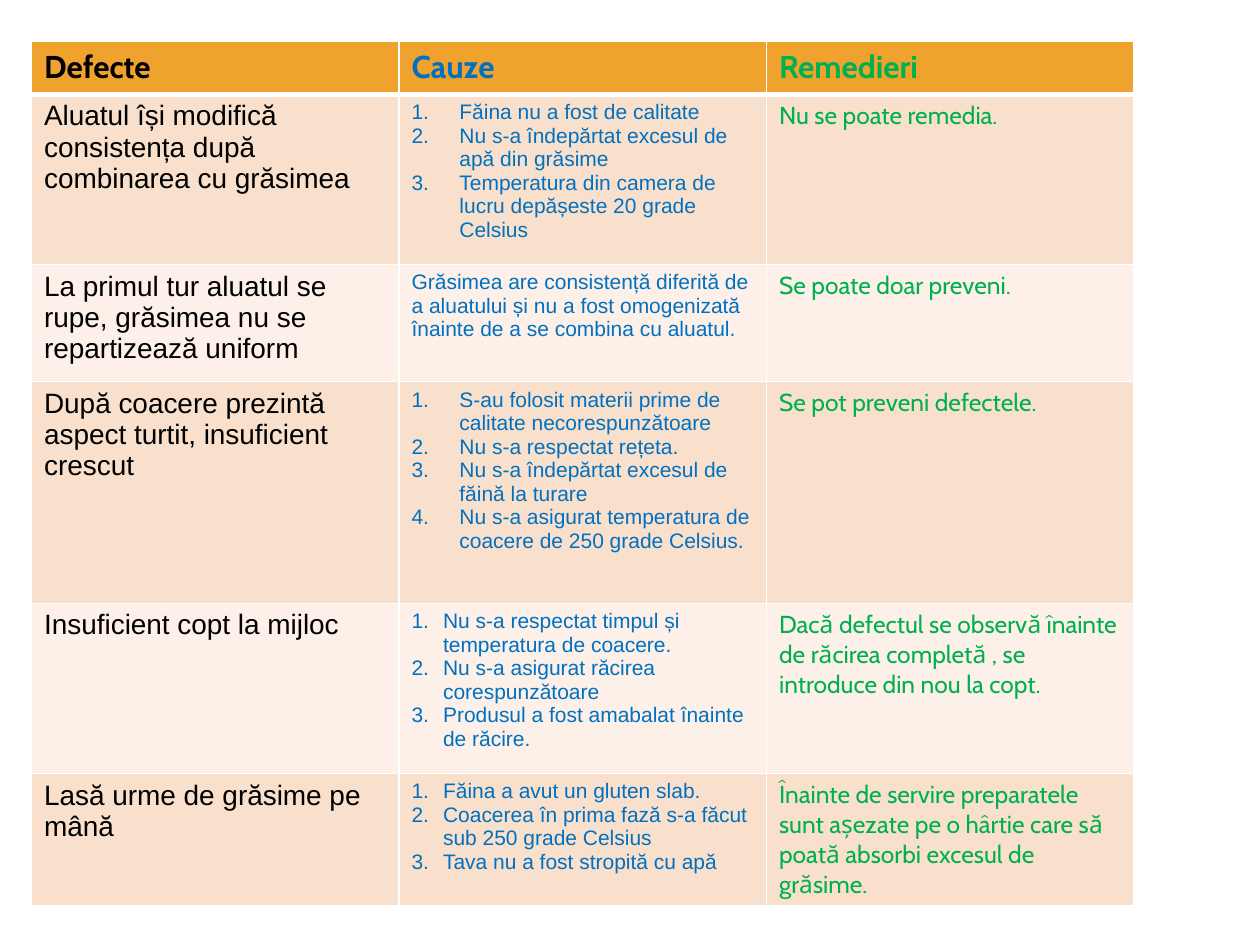
from dataclasses import dataclass

from lxml import etree
from pptx import Presentation
from pptx.dml.color import RGBColor
from pptx.oxml.ns import qn
from pptx.util import Inches, Pt

BLANK_LAYOUT = 6


@dataclass(frozen=True)
class TextStyle:
    font: str
    size: int
    color: str
    bold: bool = False


@dataclass(frozen=True)
class Theme:
    header_fill: str = "F0A22E"
    band_fills: tuple = ("F9E0CD", "FCF0E8")
    grid: str = "FFFFFF"
    grid_width: int = 1
    header_rule: int = 3
    header: tuple = (
        TextStyle("Cabin", 18, "000000", True),
        TextStyle("Cabin", 18, "0070C0", True),
        TextStyle("Cabin", 18, "00B050", True),
    )
    body: tuple = (
        TextStyle("Arial", 16, "000000"),
        TextStyle("Arial", 12, "0070C0"),
        TextStyle("Cabin", 14, "00B050"),
    )


@dataclass(frozen=True)
class NumberedList:
    indent: float
    items: tuple


class SlideBuilder:
    def __init__(self, slide, theme):
        self.slide = slide
        self.theme = theme

    def table(self, left, top, width, row_heights, rows):
        """Add a table with a header row and banded body rows."""
        theme = self.theme
        columns = len(rows[0])
        table = self.slide.shapes.add_table(
            len(rows), columns, Inches(left), Inches(top),
            Inches(width), Inches(sum(row_heights))).table
        for column in table.columns:
            column.width = Inches(width / columns)
        for index, (height, contents) in enumerate(zip(row_heights, rows)):
            table.rows[index].height = Inches(height)
            styles = theme.body if index else theme.header
            fill = theme.band_fills[(index - 1) % 2] if index else theme.header_fill
            for column, (content, style) in enumerate(zip(contents, styles)):
                cell = table.cell(index, column)
                cell.fill.solid()
                cell.fill.fore_color.rgb = RGBColor.from_string(fill)
                self.cell_text(cell, content, style)
                self.cell_borders(cell, index)

    def cell_text(self, cell, content, style):
        numbered = isinstance(content, NumberedList)
        cell.text_frame.text = "\n".join(content.items) if numbered else content
        for paragraph in cell.text_frame.paragraphs:
            if numbered:
                self.number(paragraph, content.indent)
            for run in paragraph.runs:
                run.font.name = style.font
                run.font.size = Pt(style.size)
                run.font.bold = style.bold
                run.font.color.rgb = RGBColor.from_string(style.color)

    def number(self, paragraph, indent):
        properties = paragraph._p.get_or_add_pPr()
        properties.set("marL", str(Inches(indent)))
        properties.set("indent", str(-Inches(indent)))
        etree.SubElement(properties, qn("a:buFont"), typeface="+mj-lt")
        etree.SubElement(properties, qn("a:buAutoNum"), type="arabicPeriod")

    def cell_borders(self, cell, row):
        theme = self.theme
        widths = {"L": theme.grid_width, "R": theme.grid_width,
                  "T": theme.header_rule if row == 1 else theme.grid_width,
                  "B": theme.header_rule if row == 0 else theme.grid_width}
        properties = cell._tc.get_or_add_tcPr()
        # Borders come before the fill in the cell properties
        for position, (side, width) in enumerate(widths.items()):
            line = etree.Element(qn(f"a:ln{side}"), w=str(Pt(width)))
            solid = etree.SubElement(line, qn("a:solidFill"))
            etree.SubElement(solid, qn("a:srgbClr"), val=theme.grid)
            properties.insert(position, line)


# Defects, their causes and remedies
WIDE_INDENT, NARROW_INDENT = 0.38, 0.25
ROW_HEIGHTS = (0.42, 1.35, 0.93, 1.76, 1.35, 1.04)
DEFECTS = (
    ("Defecte", "Cauze", "Remedieri"),
    ("Aluatul își modifică consistența după combinarea cu grăsimea",
     NumberedList(WIDE_INDENT, (
         "Făina nu a fost de calitate",
         "Nu s-a îndepărtat excesul de apă din grăsime",
         "Temperatura din camera de lucru depășeste 20 grade Celsius")),
     "Nu se poate remedia."),
    ("La primul tur aluatul se rupe, grăsimea nu se repartizează uniform",
     "Grăsimea are consistență diferită de a aluatului și nu a fost "
     "omogenizată înainte de a se combina cu aluatul.",
     "Se poate doar preveni."),
    ("După coacere prezintă aspect turtit, insuficient crescut",
     NumberedList(WIDE_INDENT, (
         "S-au folosit materii prime de calitate necorespunzătoare",
         "Nu s-a respectat rețeta.",
         "Nu s-a îndepărtat excesul de făină la turare",
         "Nu s-a asigurat temperatura de coacere de 250 grade Celsius.")),
     "Se pot preveni defectele."),
    ("Insuficient copt la mijloc",
     NumberedList(NARROW_INDENT, (
         "Nu s-a respectat timpul și temperatura de coacere.",
         "Nu s-a asigurat răcirea corespunzătoare",
         "Produsul a fost amabalat înainte de răcire.")),
     "Dacă defectul se observă înainte de răcirea completă , "
     "se introduce din nou la copt."),
    ("Lasă urme de grăsime pe mână",
     NumberedList(NARROW_INDENT, (
         "Făina a avut un gluten slab.",
         "Coacerea în prima fază s-a făcut sub 250 grade Celsius",
         "Tava nu a fost stropită cu apă")),
     "Înainte de servire preparatele sunt așezate pe o hârtie care "
     "să poată absorbi excesul de grăsime."),
)


def main():
    presentation = Presentation()
    presentation.slide_width = Inches(10)
    presentation.slide_height = Inches(7.5)
    slide = presentation.slides.add_slide(presentation.slide_layouts[BLANK_LAYOUT])
    builder = SlideBuilder(slide, Theme())
    builder.table(0.25, 0.33, 8.75, ROW_HEIGHTS, DEFECTS)
    presentation.save("out.pptx")


if __name__ == "__main__":
    main()
